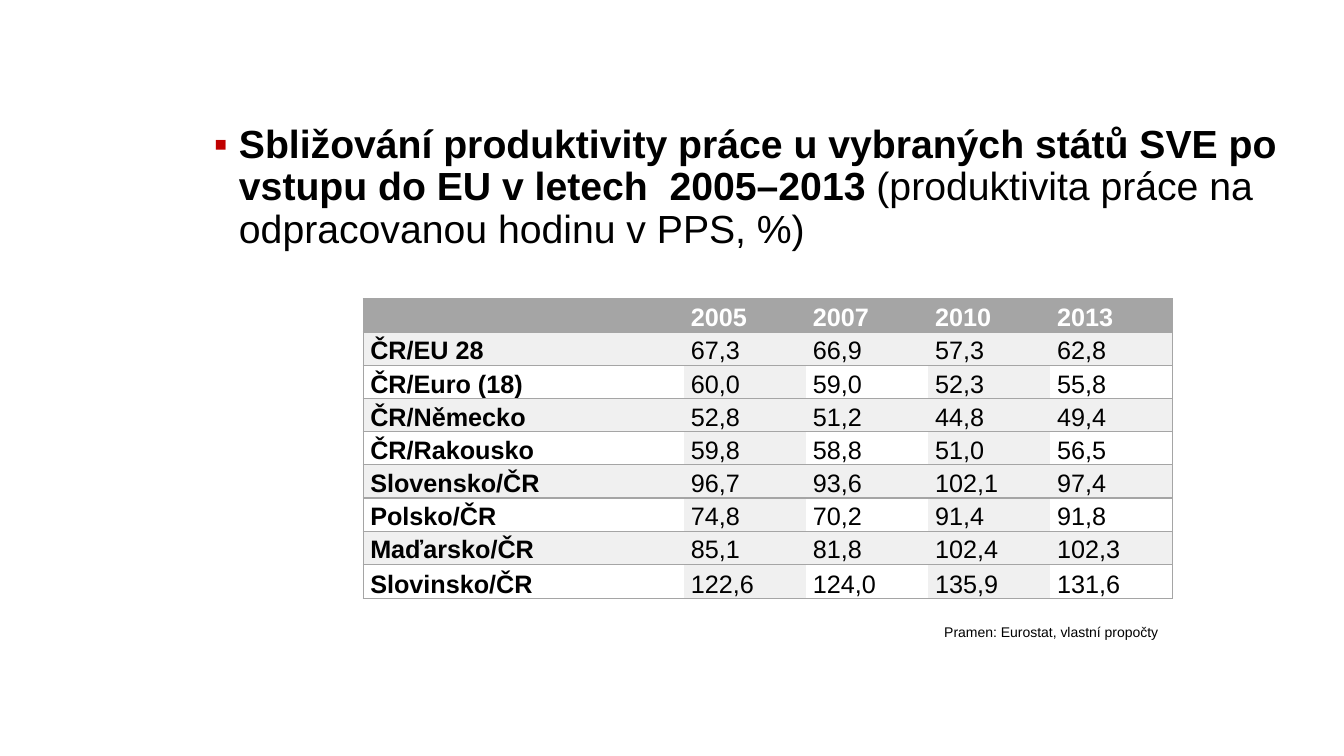
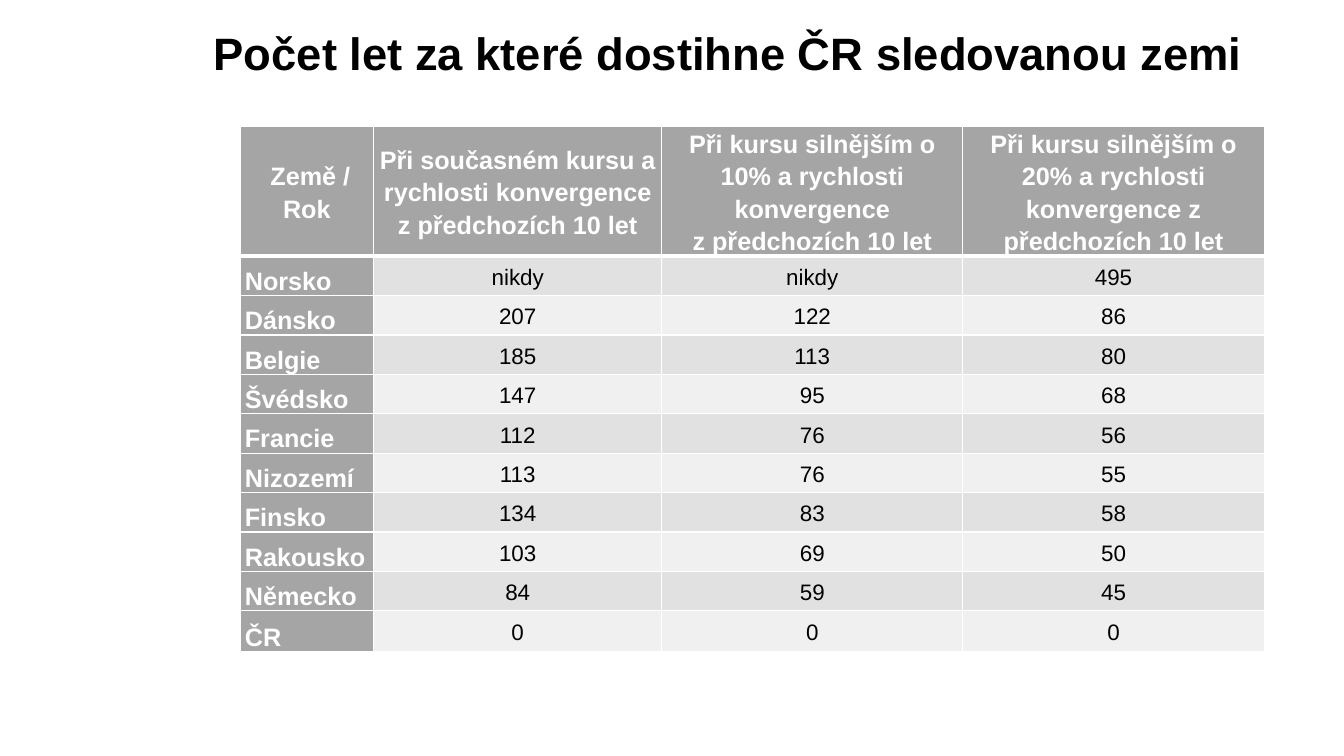
from dataclasses import dataclass

from lxml.etree import SubElement as Sub
from pptx import Presentation
from pptx.dml.color import RGBColor
from pptx.enum.text import MSO_ANCHOR as Anchor, MSO_AUTO_SIZE as Fit, PP_ALIGN as Align
from pptx.oxml.ns import qn
from pptx.util import Pt

BLACK = RGBColor(0x00, 0x00, 0x00)
WHITE = RGBColor(0xFF, 0xFF, 0xFF)
GREY = RGBColor(0xA5, 0xA5, 0xA5)
MID = RGBColor(0xE1, 0xE1, 0xE1)
LIGHT = RGBColor(0xF0, 0xF0, 0xF0)
RED = RGBColor(0xC0, 0x00, 0x00)

SHARES = [
    ("", "2005", "2007", "2010", "2013"),
    ("ČR/EU 28", "67,3", "66,9", "57,3", "62,8"),
    ("ČR/Euro (18)", "60,0", "59,0", "52,3", "55,8"),
    ("ČR/Německo", "52,8", "51,2", "44,8", "49,4"),
    ("ČR/Rakousko", "59,8", "58,8", "51,0", "56,5"),
    ("Slovensko/ČR", "96,7", "93,6", "102,1", "97,4"),
    ("Polsko/ČR", "74,8", "70,2", "91,4", "91,8"),
    ("Maďarsko/ČR", "85,1", "81,8", "102,4", "102,3"),
    ("Slovinsko/ČR", "122,6", "124,0", "135,9", "131,6"),
]

YEARS = [
    (
        " Země / Rok",
        "Při současném kursu a rychlosti konvergence z předchozích 10 let",
        "Při kursu silnějším o 10% a rychlosti konvergence\nz předchozích 10 let",
        "Při kursu silnějším o 20% a rychlosti konvergence z předchozích 10 let",
    ),
    ("Norsko", "nikdy", "nikdy", "495"),
    ("Dánsko", "207", "122", "86"),
    ("Belgie", "185", "113", "80"),
    ("Švédsko", "147", "95", "68"),
    ("Francie", "112", "76", "56"),
    ("Nizozemí", "113", "76", "55"),
    ("Finsko", "134", "83", "58"),
    ("Rakousko", "103", "69", "50"),
    ("Německo", "84", "59", "45"),
    ("ČR", "0", "0", "0"),
]


@dataclass
class Look:
    fill: RGBColor
    ink: RGBColor
    bold: bool
    size: float = 18
    align: Align = Align.LEFT
    anchor: Anchor = Anchor.BOTTOM
    line: RGBColor = GREY
    edges: tuple = (0, 0, 1, 1)


def share_look(row, col):
    fill = GREY if row == 0 else LIGHT if row % 2 or col % 2 else WHITE
    ink = BLACK if row else WHITE
    edges = (int(col == 0), int(col == len(SHARES[0]) - 1), 1, 1)
    return Look(fill, ink, row == 0 or col == 0, edges=edges)


def year_look(row, col):
    head = row == 0 or col == 0
    side = row > 0 and col == 0
    edges = (1, 1, 3 if row == 1 else 1, 3 if row == 0 else 1)
    return Look(
        GREY if head else MID if row % 2 else LIGHT,
        WHITE if head else BLACK,
        head,
        18 if head else 16,
        Align.LEFT if side else Align.CENTER,
        Anchor.BOTTOM if side else Anchor.MIDDLE,
        WHITE,
        edges,
    )


class Deck:
    face = "Arial"

    def __init__(self):
        self.file = Presentation()
        self.file.slide_width, self.file.slide_height = Pt(960), Pt(540)
        self.page = None

    def add(self, layout):
        self.page = self.file.slides.add_slide(self.file.slide_layouts[layout])

    def place(self, shape, left, top, width, height):
        shape.left, shape.top = Pt(left), Pt(top)
        shape.width, shape.height = Pt(width), Pt(height)

    def style(self, para, size, ink=BLACK, bold=None):
        font = para.font
        font.name, font.size, font.bold = self.face, Pt(size), bold
        font.color.rgb = ink

    def title(self, text):
        shape = self.page.shapes.title
        self.place(shape, 145.5, 7, 798.5, 65)
        frame = shape.text_frame
        frame.text = text
        frame.auto_size, frame.vertical_anchor = Fit.NONE, Anchor.MIDDLE
        para = frame.paragraphs[0]
        para.alignment, para.line_spacing = Align.LEFT, 0.9
        self.style(para, 32.4, bold=True)

    def bullet(self, strong, plain):
        title = self.page.shapes.title
        title.element.getparent().remove(title.element)
        shape = self.page.placeholders[1]
        self.place(shape, 145.5, 85.5, 798.5, 400)
        frame = shape.text_frame
        frame.auto_size = Fit.NONE
        para = frame.paragraphs[0]
        para.line_spacing, para.space_before = 0.9, Pt(0)
        prop = para._p.get_or_add_pPr()
        prop.set("marL", str(Pt(18)))
        prop.set("indent", str(Pt(-18)))
        Sub(Sub(prop, qn("a:buClr")), qn("a:srgbClr"), val=str(RED))
        Sub(prop, qn("a:buFont"), typeface=self.face)
        Sub(prop, qn("a:buChar"), char="▪")
        self.style(para, 28)
        for text, bold in ((strong, True), (plain, False)):
            run = para.add_run()
            run.text, run.font.bold = text, bold

    def note(self, text):
        box = self.page.shapes.add_textbox(Pt(653), Pt(441.5), Pt(183), Pt(19.5))
        frame = box.text_frame
        frame.text = text
        frame.word_wrap, frame.auto_size = False, Fit.SHAPE_TO_FIT_TEXT
        para = frame.paragraphs[0]
        para._p.get_or_add_pPr().set("marL", str(Pt(14.4)))
        self.style(para, 10)

    def edge(self, cell, look):
        prop = cell._tc.get_or_add_tcPr()
        for side, width in zip("LRTB", look.edges):
            line = Sub(prop, qn("a:ln" + side), w=str(Pt(width)))
            if width:
                Sub(Sub(line, qn("a:solidFill")), qn("a:srgbClr"), val=str(look.line))
            else:
                Sub(line, qn("a:noFill"))

    def cell(self, cell, text, look, pad):
        cell.text = text
        cell.margin_left = cell.margin_right = Pt(pad)
        cell.margin_top = cell.margin_bottom = 0
        cell.vertical_anchor = look.anchor
        self.edge(cell, look)
        cell.fill.solid()
        cell.fill.fore_color.rgb = look.fill
        for para in cell.text_frame.paragraphs:
            para.alignment, para.line_spacing = look.align, 1.15
            self.style(para, look.size, look.ink, look.bold)

    def table(self, data, left, top, cols, rows, pad, rule):
        shape = self.page.shapes.add_table(
            len(rows), len(cols), Pt(left), Pt(top), Pt(sum(cols)), Pt(sum(rows))
        )
        grid = shape.table
        grid.horz_banding = False
        for col, width in zip(grid.columns, cols):
            col.width = Pt(width)
        for row, height in zip(grid.rows, rows):
            row.height = Pt(height)
        for r, line in enumerate(data):
            for c, text in enumerate(line):
                self.cell(grid.cell(r, c), text, rule(r, c), pad)


def main():
    deck = Deck()

    deck.add(1)
    deck.bullet(
        "Sbližování produktivity práce u vybraných států SVE po vstupu do EU v letech  2005–2013 ",
        "(produktivita práce na odpracovanou hodinu v PPS, %)",
    )
    deck.table(SHARES, 259.5, 213.5, [229] + [87.2] * 4, [23.7] * 8 + [24.5], 5, share_look)
    deck.note("Pramen: Eurostat, vlastní propočty")

    deck.add(5)
    deck.title("Počet let za které dostihne ČR sledovanou zemi")
    deck.table(
        YEARS, 171.4, 90, [95.6, 205.6, 215.2, 215.2], [93] + [28.15] * 9 + [29.2], 3.5, year_look
    )

    deck.file.save("out.pptx")


if __name__ == "__main__":
    main()
